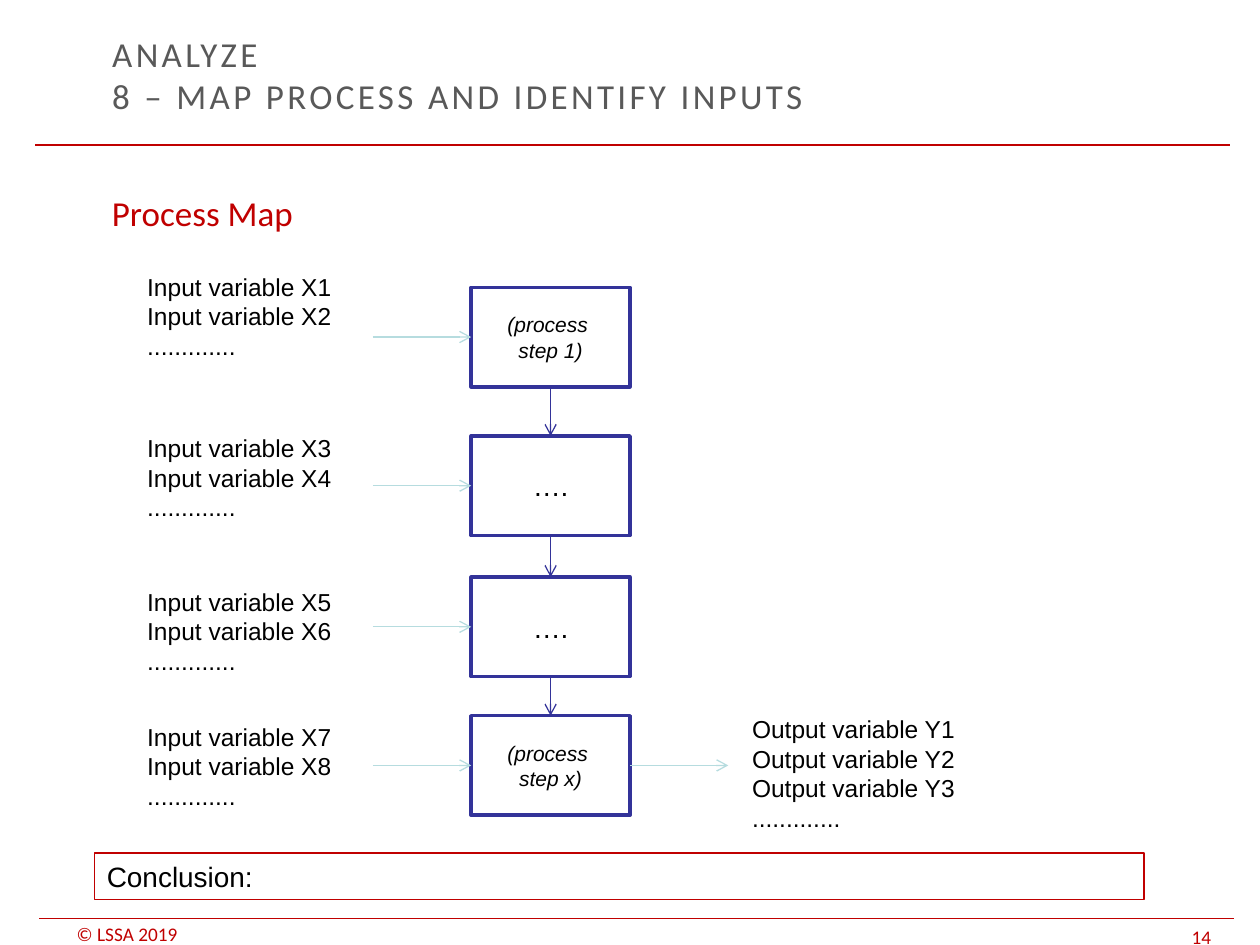
from dataclasses import dataclass

from lxml import etree
from pptx import Presentation
from pptx.dml.color import RGBColor
from pptx.enum.shapes import MSO_CONNECTOR, MSO_SHAPE
from pptx.enum.text import MSO_ANCHOR, MSO_AUTO_SIZE, PP_ALIGN
from pptx.oxml.ns import qn
from pptx.util import Inches, Pt

LINE = MSO_CONNECTOR.STRAIGHT
RECT = MSO_SHAPE.RECTANGLE
STEP = MSO_SHAPE.FLOWCHART_PROCESS
TOP, MID, LOW = MSO_ANCHOR.TOP, MSO_ANCHOR.MIDDLE, MSO_ANCHOR.BOTTOM
LEFT, CENTER = PP_ALIGN.LEFT, PP_ALIGN.CENTER
FIXED = MSO_AUTO_SIZE.NONE
SITE_TOP, SITE_LEFT, SITE_LOW, SITE_RIGHT = range(4)


@dataclass(frozen=True)
class Theme:
    red: RGBColor = RGBColor(0xC0, 0x00, 0x00)
    grey: RGBColor = RGBColor(0x59, 0x59, 0x59)
    black: RGBColor = RGBColor(0x00, 0x00, 0x00)
    navy: RGBColor = RGBColor(0x33, 0x33, 0x99)
    aqua: RGBColor = RGBColor(0xB6, 0xDC, 0xDF)
    head: str = "Calibri"
    body: str = "Arial"
    large: int = 20
    mid: int = 16
    list: int = 14
    small: int = 12
    foot: int = 11
    thin: float = 0.75
    thick: float = 2
    track: int = 190


THEME = Theme()
DOTS = "............."
STEP_X, STEP_W, STEP_H = 3.74, 1.26, 0.79
ARROW_W = 0.78
STEPS = [
    (2.28, ["(process ", "step 1)"], True),
    (3.46, ["…."], False),
    (4.58, ["…."], False),
    (5.68, ["(process ", "step x)"], True),
]
INPUTS = [
    (2.11, 1.73, "Input variable X1 \vInput variable X2"),
    (3.39, 1.67, "Input variable X3\vInput variable X4"),
    (4.61, 1.67, "Input variable X5\vInput variable X6"),
    (5.68, 1.67, "Input variable X7\vInput variable X8"),
]
OUTPUTS = ["Output variable Y1\vOutput variable Y2", "Output variable Y3", DOTS]


def assign(item, values):
    for name, value in values.items():
        setattr(item, name, value)


def write(frame, paras, size, face, color, align=LEFT, italic=False, track=0, **form):
    assign(frame, {"auto_size": FIXED, "word_wrap": True, "vertical_anchor": TOP, **form})
    look = {"size": Pt(size), "name": face, "italic": italic}
    for i, text in enumerate(paras):
        para = frame.paragraphs[0] if i == 0 else frame.add_paragraph()
        para.text = text
        para.alignment = align
        for run in para.runs:
            assign(run.font, look)
            run.font.color.rgb = color
            if track:
                run._r.get_or_add_rPr().set("spc", str(track))
        for mark in para._p.findall(qn("a:br")):
            etree.SubElement(mark, qn("a:rPr"), sz=str(size * 100))


def add_text(slide, at, paras, size, face, color, **form):
    box = slide.shapes.add_textbox(*map(Inches, at))
    write(box.text_frame, paras, size, face, color, **form)


def add_box(slide, kind, at, paras, size, edge, width, **form):
    box = slide.shapes.add_shape(kind, *map(Inches, at))
    box.shadow.inherit = False
    box.fill.background()
    box.line.color.rgb = edge
    box.line.width = Pt(width)
    write(box.text_frame, paras, size, THEME.body, THEME.black, **form)
    return box


def add_line(slide, ends, color, arrow=True):
    line = slide.shapes.add_connector(LINE, *map(Inches, ends))
    line.line.color.rgb = color
    line.line.width = Pt(THEME.thin)
    if arrow:
        etree.SubElement(line.line._get_or_add_ln(), qn("a:tailEnd"), type="arrow")
    etree.SubElement(line._element.spPr, qn("a:effectLst"))
    return line


def add_title(slide):
    title = slide.shapes.title
    spot = {"left": 0.79, "top": 0.26, "width": 7.09, "height": 0.66}
    assign(title, {name: Inches(value) for name, value in spot.items()})
    write(title.text_frame, ["ANALYZE\v8 – MAP PROCESS AND IDENTIFY INPUTS"],
          THEME.large, THEME.head, THEME.grey, track=THEME.track, vertical_anchor=MID)


def add_frame(slide):
    for x, y in ((0.28, 1.15), (0.31, 7.29)):
        add_line(slide, (x, y, x + 9.48, y), THEME.red, arrow=False)
    for at, text in (((0.51, 7.32, 1.42, 0.18), "© LSSA 2019"),
                     ((9.36, 7.31, 0.64, 0.22), "14")):
        add_text(slide, at, [text], THEME.foot, THEME.head, THEME.red,
                 vertical_anchor=LOW, margin_top=0, margin_bottom=0)


def add_flow(slide):
    steps = []
    for top, paras, named in STEPS:
        size = THEME.small if named else THEME.mid
        steps.append(add_box(slide, STEP, (STEP_X, top, STEP_W, STEP_H), paras, size,
                             THEME.navy, THEME.thick, align=CENTER, italic=named,
                             vertical_anchor=MID))
    center = STEP_X + STEP_W / 2
    for first, last in zip(steps, steps[1:]):
        link = add_line(slide, (center, 3, center, 4), THEME.navy)
        link.begin_connect(first, SITE_LOW)
        link.end_connect(last, SITE_TOP)
    for step, (top, _, _) in zip(steps, STEPS):
        y = top + STEP_H / 2
        link = add_line(slide, (STEP_X - ARROW_W, y, STEP_X, y), THEME.aqua)
        link.end_connect(step, SITE_LEFT)
    edge = STEP_X + STEP_W
    link = add_line(slide, (edge, y, edge + ARROW_W, y), THEME.aqua)
    link.begin_connect(steps[-1], SITE_RIGHT)


def add_lists(slide):
    style = (THEME.list, THEME.body, THEME.black)
    add_text(slide, (5.87, 5.62, 1.82, 1.04), OUTPUTS, *style, word_wrap=False)
    for top, width, text in INPUTS:
        add_text(slide, (1.07, top, width, 0.81), [text, DOTS], *style, word_wrap=False)


def main():
    deck = Presentation()
    deck.slide_width, deck.slide_height = Inches(10), Inches(7.5)
    slide = deck.slides.add_slide(deck.slide_layouts[5])
    add_frame(slide)
    add_title(slide)
    add_text(slide, (0.79, 1.47, 8.66, 0.5), ["Process Map"],
             THEME.large, THEME.head, THEME.red)
    add_box(slide, RECT, (0.75, 6.77, 8.33, 0.37), ["Conclusion:"], THEME.mid,
            THEME.red, THEME.thin)
    add_flow(slide)
    add_lists(slide)
    deck.save("out.pptx")


if __name__ == "__main__":
    main()
